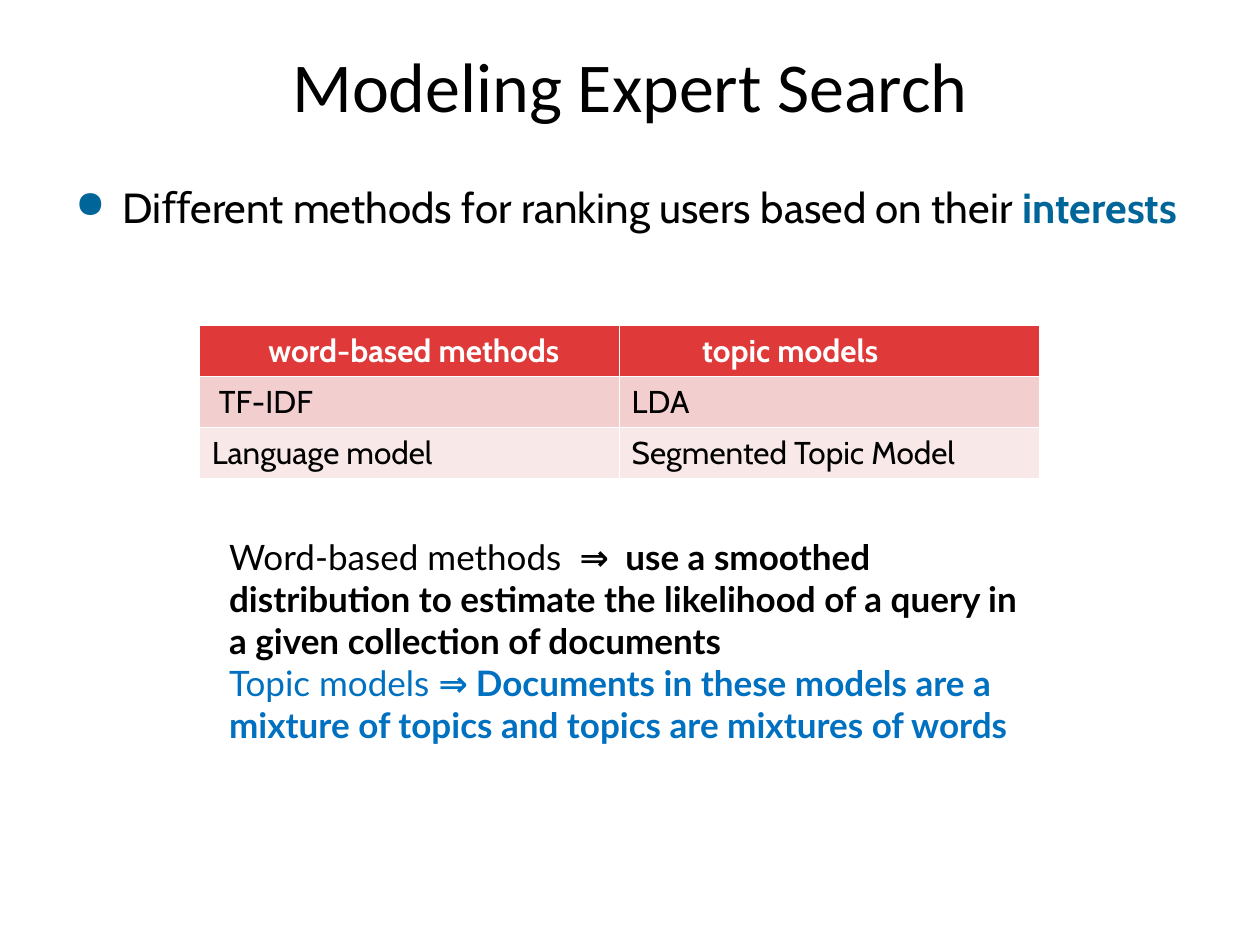
from pptx import Presentation
from pptx.dml.color import RGBColor
from pptx.enum.text import MSO_ANCHOR, PP_ALIGN
from pptx.oxml.ns import qn
from pptx.util import Cm, Pt
from lxml import etree

BLACK = RGBColor(0x00, 0x00, 0x00)
WHITE = RGBColor(0xFF, 0xFF, 0xFF)
TEAL = RGBColor(0x00, 0x66, 0x99)
BLUE = RGBColor(0x00, 0x70, 0xC0)
RED = RGBColor(0xDF, 0x39, 0x39)
ROSE = RGBColor(0xF3, 0xCE, 0xCE)
BLUSH = RGBColor(0xF9, 0xE8, 0xE8)
CENTER = PP_ALIGN.CENTER
MIDDLE = MSO_ANCHOR.MIDDLE
TITLE_ONLY = 5


class ExpertSearchSlide:
    """Holds the fonts and the current slide, and adds its elements."""

    title_font = "Calibri"
    list_font = "Cabin"
    note_font = "Lato"

    def __init__(self, deck):
        self.slide = deck.slides.add_slide(deck.slide_layouts[TITLE_ONLY])

    def style(self, font, name, size, color, bold=False):
        font.name, font.size, font.bold = name, Pt(size), bold
        font.color.rgb = color

    def title(self, text, left, top, width, height):
        heading = self.slide.shapes.title
        heading.left, heading.top = Cm(left), Cm(top)
        heading.width, heading.height = Cm(width), Cm(height)
        heading.text_frame.text = text
        heading.text_frame.vertical_anchor = MIDDLE
        paragraph = heading.text_frame.paragraphs[0]
        paragraph.alignment = CENTER
        self.style(paragraph.font, self.title_font, 40, BLACK)

    def text_box(self, left, top, width, height):
        box = self.slide.shapes.add_textbox(Cm(left), Cm(top), Cm(width), Cm(height))
        box.text_frame.word_wrap = True
        return box.text_frame

    def bullet(self, text, emphasis, left, top, width, height):
        paragraph = self.text_box(left, top, width, height).paragraphs[0]
        paragraph.space_before = Pt(4.8)
        for words, color, bold in ((text, BLACK, False), (emphasis, TEAL, True)):
            run = paragraph.add_run()
            run.text = words
            self.style(run.font, self.list_font, 24, color, bold)
        properties = paragraph._p.get_or_add_pPr()
        properties.set("marL", str(Cm(0.95)))
        properties.set("indent", str(Cm(-0.95)))
        color = etree.SubElement(properties, qn("a:buClr"))
        etree.SubElement(color, qn("a:srgbClr"), val=str(TEAL))
        etree.SubElement(properties, qn("a:buSzPct"), val="90000")
        etree.SubElement(properties, qn("a:buChar"), char="●")

    def table(self, rows, fills, indents, left, top, width, height):
        grid = self.slide.shapes.add_table(
            len(rows), len(rows[0]), Cm(left), Cm(top), Cm(width), Cm(height)
        ).table
        for r, (texts, fill) in enumerate(zip(rows, fills)):
            is_header = r == 0
            for c, text in enumerate(texts):
                cell = grid.cell(r, c)
                cell.text = text
                cell.margin_left = Cm(0.25 + indents.get(text, 0))
                cell.fill.solid()
                cell.fill.fore_color.rgb = fill
                self.style(cell.text_frame.paragraphs[0].font, self.list_font, 18,
                           WHITE if is_header else BLACK, is_header)

    def explanations(self, entries, left, top, width, height):
        frame = self.text_box(left, top, width, height)
        for i, (method, arrow, meaning, color) in enumerate(entries):
            paragraph = frame.add_paragraph() if i else frame.paragraphs[0]
            for words, name, bold in (
                (method, self.note_font, False),
                (arrow, self.list_font, True),
                (meaning, self.note_font, True),
            ):
                run = paragraph.add_run()
                run.text = words
                self.style(run.font, name, 20, color, bold)


def main():
    deck = Presentation()
    deck.slide_width, deck.slide_height = Cm(25.4), Cm(19.05)
    page = ExpertSearchSlide(deck)
    page.title("Modeling Expert Search", 4.45, 0.3, 16.5, 2.82)
    page.bullet("Diﬀerent methods for ranking users based on their ", "interests",
                1.27, 3.53, 22.86, 13.49)
    page.table(
        [("word-based methods", "topic models"),
         ("TF-IDF", "LDA"),
         ("Language model", "Segmented Topic Model")],
        (RED, ROSE, BLUSH),
        {"word-based methods": 1.14, "topic models": 1.42, "TF-IDF": 0.14},
        4.02, 6.56, 16.93, 3.09,
    )
    page.explanations(
        [("Word-based methods  ", "⇒ ",
          " use a smoothed distribution to estimate the likelihood of a query"
          " in a given collection of documents", BLACK),
         ("Topic models ", "⇒ ",
          "Documents in these models are a mixture of topics"
          " and topics are mixtures of words", BLUE)],
        4.37, 10.67, 16.74, 5.38,
    )
    deck.save("out.pptx")


if __name__ == "__main__":
    main()
